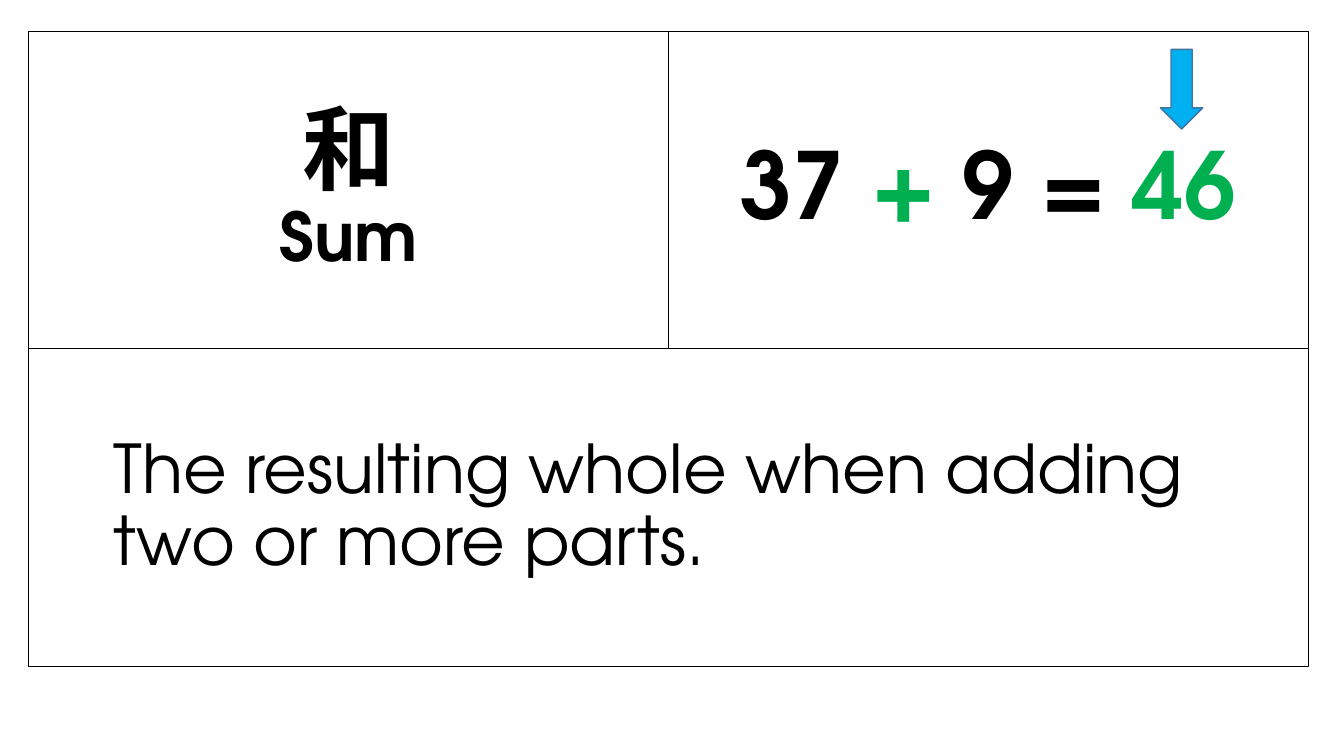
from lxml.etree import SubElement
from pptx import Presentation
from pptx.dml.color import RGBColor
from pptx.enum.shapes import MSO_SHAPE
from pptx.enum.text import MSO_ANCHOR, PP_ALIGN
from pptx.oxml.ns import qn
from pptx.util import Inches, Pt

COLORS = {"black": "000000", "green": "00B050", "blue": "00B0F0", "edge": "43739E"}
LATIN, CJK = "TeX Gyre Adventor", "Roboto"

# Content: each line is a list of (text, size, bold, font, colour) runs
TERM = [[("和", 66, True, CJK, "black")],
        [("Sum", 48, True, LATIN, "black")]]
EQUATION = [[(text, 66, True, LATIN, color) for text, color in
             (("37 ", "black"), ("+", "green"), (" 9 = ", "black"), ("46", "green"))]]
DEFINITION = [[("The resulting whole when adding two or more parts.",
                48, False, LATIN, "black")]]

# Card grid: two cells above one full-width cell
LEFT, TOP, CELL_W, CELL_H = 0.28, 0.31, 6.35, 3.15
CARDS = [  # column, row, column span, alignment, left indent, lines
    (0, 0, 1, PP_ALIGN.CENTER, 0, TERM),
    (1, 0, 1, PP_ALIGN.CENTER, 0, EQUATION),
    (0, 1, 2, PP_ALIGN.LEFT, 0.75, DEFINITION),
]
ARROW = (11.51, 0.49, 0.42, 0.79)


def rgb(name):
    return RGBColor.from_string(COLORS[name])


def add_shape(slide, kind, box, line, width):
    sp = slide.shapes.add_shape(kind, *map(Inches, box))
    sp.shadow.inherit = False
    sp.line.color.rgb = rgb(line)
    sp.line.width = Pt(width)
    return sp


def add_run(p, text, size, bold, font, color):
    r = p.add_run()
    r.text = text
    style = {"size": Pt(size), "bold": bold, "name": font}
    for key, value in style.items():
        setattr(r.font, key, value)
    r.font.color.rgb = rgb(color)
    SubElement(r.font._element, qn("a:ea"), typeface=font)


def add_card(slide, col, row, span, align, indent, lines):
    box = (LEFT + col * CELL_W, TOP + row * CELL_H, span * CELL_W, CELL_H)
    sp = add_shape(slide, MSO_SHAPE.RECTANGLE, box, "black", 0.75)
    sp.fill.background()
    tf = sp.text_frame
    tf.word_wrap = True
    tf.vertical_anchor = MSO_ANCHOR.MIDDLE
    p = tf.paragraphs[0]
    p.alignment = align
    p.line_spacing = 0.9
    if indent:
        p._p.get_or_add_pPr().set("marL", str(Inches(indent)))
    for i, runs in enumerate(lines):
        if i:
            p.add_line_break()
        for run in runs:
            add_run(p, *run)


prs = Presentation()
prs.slide_width, prs.slide_height = Inches(13.33), Inches(7.5)
s = prs.slides.add_slide(prs.slide_layouts[6])

# Term, equation and definition
for card in CARDS:
    add_card(s, *card)

# Arrow pointing at the sum
arrow = add_shape(s, MSO_SHAPE.DOWN_ARROW, ARROW, "edge", 1)
arrow.fill.solid()
arrow.fill.fore_color.rgb = rgb("blue")

prs.save("out.pptx")
